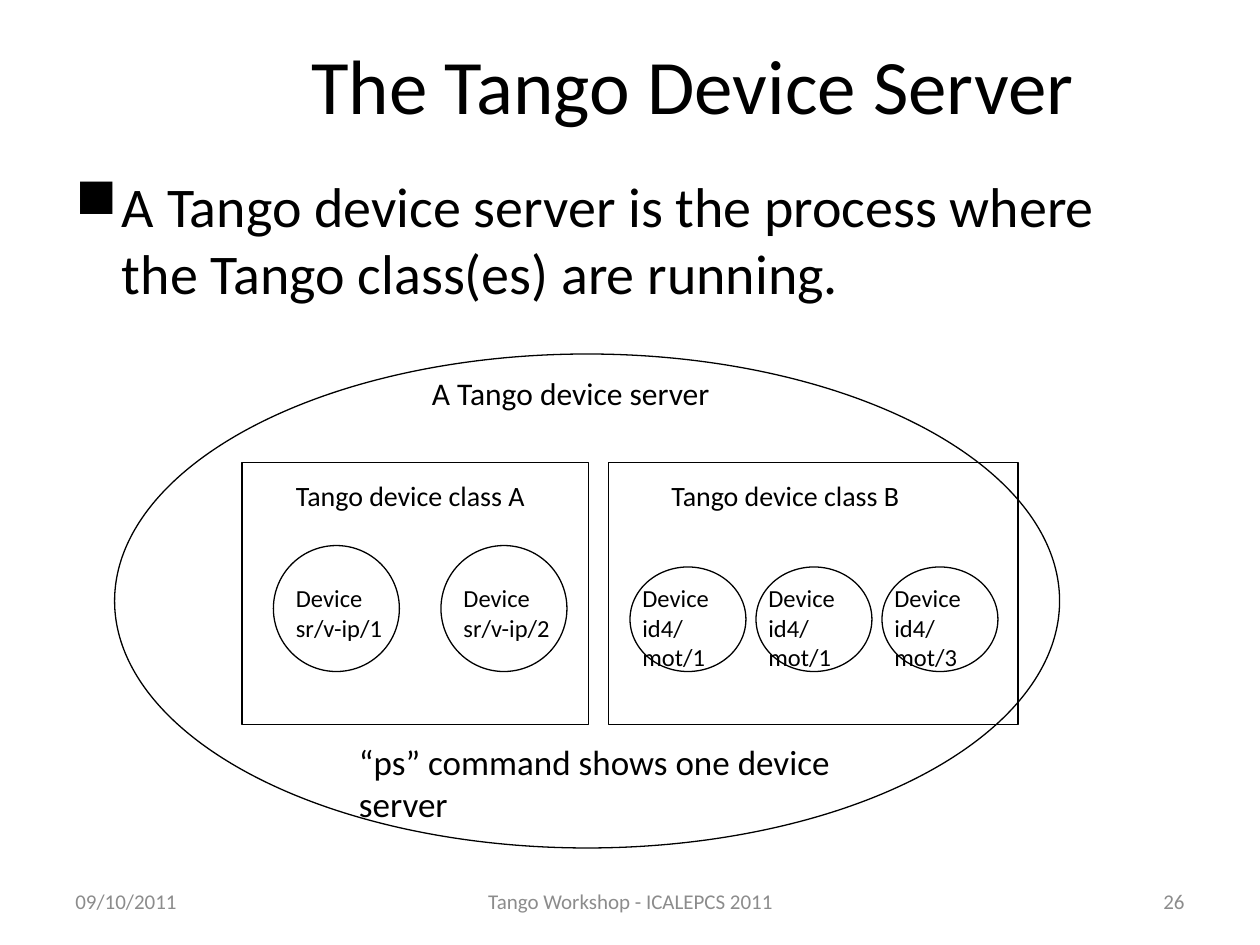
from lxml.etree import SubElement
from pptx import Presentation
from pptx.dml.color import RGBColor
from pptx.enum.shapes import MSO_SHAPE as Shape
from pptx.enum.text import MSO_ANCHOR as Anchor, PP_ALIGN as Align
from pptx.oxml.ns import qn
from pptx.util import Inches, Pt

COLORS = {"ink": "000000", "footer": "8C8C8C"}
FONT = "Calibri"


def add_text(slide, text, box, size=14, color="ink", align=Align.LEFT,
             anchor=Anchor.TOP, wrap=True, bullet=None, indent=0.37):
    """Add a text box with one paragraph per line of text."""
    shape = slide.shapes.add_textbox(*map(Inches, box))
    frame = shape.text_frame
    frame.word_wrap = wrap
    frame.vertical_anchor = anchor
    frame.text = text
    for paragraph in frame.paragraphs:
        paragraph.alignment = align
        if bullet:
            properties = paragraph._p.get_or_add_pPr()
            properties.set("marL", str(Inches(indent)))
            properties.set("indent", str(-Inches(indent)))
            SubElement(properties, qn("a:buChar"), char=bullet)
        paragraph.font.name = FONT
        paragraph.font.size = Pt(size)
        paragraph.font.color.rgb = RGBColor.from_string(COLORS[color])
    return shape


def add_outline(slide, kind, box):
    """Add an unfilled shape with a thin line."""
    shape = slide.shapes.add_shape(kind, *map(Inches, box))
    shape.shadow.inherit = False
    shape.fill.background()
    shape.line.color.rgb = RGBColor.from_string(COLORS["ink"])
    shape.line.width = Pt(0.75)
    return shape


def add_device_class(slide, box, title, title_inset, devices, first, pitch,
                     size, label_inset, label_width):
    """Add a class rectangle with its title and a row of devices."""
    left, top, width, height = box
    add_outline(slide, Shape.RECTANGLE, box)
    add_text(slide, title, (left + title_inset, top + 0.08, 2.48, 0.37), size=16)
    for index, device in enumerate(devices):
        device_left = left + first[0] + index * pitch
        add_outline(slide, Shape.OVAL, (device_left, top + first[1], *size))
        add_text(slide, f"Device\n{device}",
                 (device_left + label_inset, top + 0.91, label_width, 0.57))


def add_server(slide, box):
    """Add the device server ellipse with its captions and classes."""
    left, top, width, height = box
    add_outline(slide, Shape.OVAL, box)
    add_text(slide, "A Tango device server",
             (left + 2.42, top + 0.11, 3.23, 0.5), size=18, wrap=False)
    add_text(slide, "“ps” command shows one device server",
             (left + 1.84, top + 3.02, 4.65, 0.44), size=20)
    add_device_class(slide, (left + 1.01, top + 0.86, 2.75, 2.08),
                     "Tango device class A", 0.33, ["sr/v-ip/1", "sr/v-ip/2"],
                     first=(0.25, 0.66), pitch=1.33, size=(1, 1),
                     label_inset=0.08, label_width=0.92)
    add_device_class(slide, (left + 3.92, top + 0.86, 3.25, 2.08),
                     "Tango device class B", 0.4,
                     ["id4/mot/1", "id4/mot/1", "id4/mot/3"],
                     first=(0.17, 0.83), pitch=1, size=(0.92, 0.83),
                     label_inset=0, label_width=0.96)


def add_heading(slide, box):
    """Add the title and the bulleted statement below it."""
    left, top, width, height = box
    add_text(slide, "The Tango Device Server", (left + 0.75, top, 8.5, 0.83),
             size=44, align=Align.CENTER, anchor=Anchor.MIDDLE)
    add_text(slide, "A Tango device server is the process where "
             "the Tango class(es) are running.",
             (left, top + 1.06, 8.5, height - 1.06), size=32, bullet="■")


def add_footer(slide, box):
    """Add the date, event and slide number."""
    left, top, width, height = box
    for text, offset, part_width, align in (
            ("09/10/2011", 0, 2.33, Align.LEFT),
            ("Tango Workshop - ICALEPCS 2011", 2.92, 3.17, Align.CENTER),
            ("26", width - 2.33, 2.33, Align.RIGHT)):
        add_text(slide, text, (left + offset, top, part_width, height), size=12,
                 color="footer", align=align, anchor=Anchor.MIDDLE)


def main():
    """Build and save the slide."""
    presentation = Presentation()
    presentation.slide_width, presentation.slide_height = Inches(10), Inches(7.5)
    slide = presentation.slides.add_slide(presentation.slide_layouts[6])
    add_heading(slide, (0.5, 0.25, 9.25, 2.31))
    add_server(slide, (0.91, 2.81, 7.5, 3.92))
    add_footer(slide, (0.5, 6.95, 9, 0.4))
    presentation.save("out.pptx")


if __name__ == "__main__":
    main()
